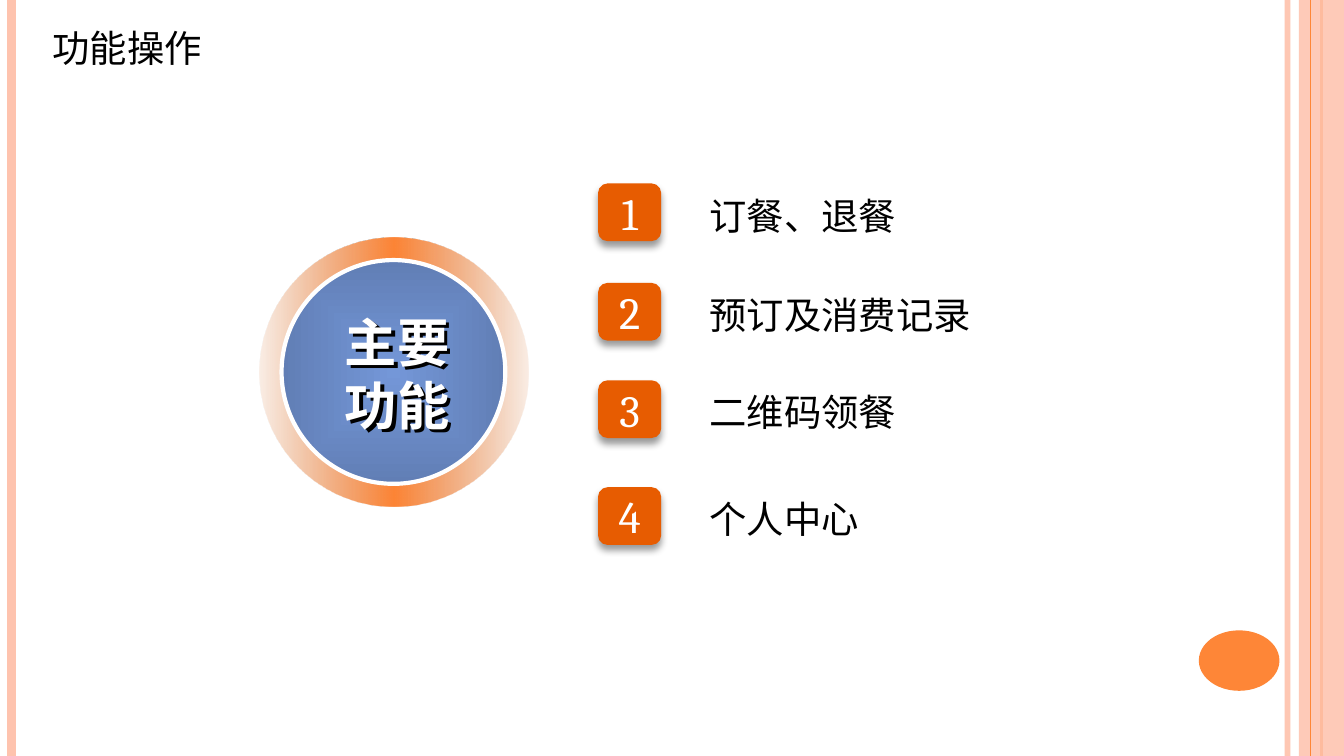
from lxml import etree
from pptx import Presentation
from pptx import util as u
from pptx.dml.color import RGBColor
from pptx.enum import shapes, text
from pptx.oxml import parse_xml
from pptx.oxml.ns import nsdecls, qn

PX = 4572  # 200 px to the inch
WIDTH, HEIGHT = 2000, 1125
ORANGE, PEACH, BADGE, BLUE = "FE8637", "FEC3AE", "E75C01", "7598D9"
WHITE, BLACK = "FFFFFF", "000000"
SANS, SERIF = "Noto Sans CJK SC", "Cambria"
FEATURES = [(273, "订餐、退餐"), (421, "预订及消费记录"), (566, "二维码领餐"), (725, "个人中心")]


def px(*lengths):
    return [u.Emu(length * PX) for length in lengths]


def rgb(value):
    return RGBColor.from_string(value)


def set_alpha(shape, percent):
    colour = shape.element.spPr.find(".//" + qn("a:srgbClr"))
    etree.SubElement(colour, qn("a:alpha")).set("val", str(percent * 1000))


def add_shadow(shape, blur, distance, direction, alpha):
    """Give a black outer shadow; blur and distance in points, direction in degrees."""
    shape.shadow.inherit = False
    properties = shape.element.spPr
    properties.replace(properties.find(qn("a:effectLst")), parse_xml(
        f'<a:effectLst {nsdecls("a")}><a:outerShdw blurRad="{u.Pt(blur)}" dist="{u.Pt(distance)}" '
        f'dir="{direction * 60000}" algn="ctr" rotWithShape="0"><a:srgbClr val="{BLACK}">'
        f'<a:alpha val="{alpha * 1000}"/></a:srgbClr></a:outerShdw></a:effectLst>'))


def add_gradient(shape, stops, direction):
    """Fill with (position, colour, shade, alpha) stops; direction is a:lin or a:path XML."""
    stop_xml = "".join(
        f'<a:gs pos="{position * 1000}"><a:srgbClr val="{colour}"><a:shade val="{shade * 1000}"/>'
        f'<a:alpha val="{alpha * 1000}"/></a:srgbClr></a:gs>'
        for position, colour, shade, alpha in stops)
    shape.fill.background()
    properties = shape.element.spPr
    properties.replace(properties.find(qn("a:noFill")), parse_xml(
        f'<a:gradFill {nsdecls("a")} rotWithShape="1"><a:gsLst>{stop_xml}</a:gsLst>'
        f'{direction}</a:gradFill>'))


def add_form(slide, preset, box, fill=None):
    form = slide.shapes.add_shape(preset, *px(*box))
    form.shadow.inherit = False
    form.line.fill.background()
    if fill:
        form.fill.solid()
        form.fill.fore_color.rgb = rgb(fill)
    return form


def add_rule(slide, x, colour, width):
    """Draw a vertical line over the full slide height."""
    rule = slide.shapes.add_connector(shapes.MSO_CONNECTOR.STRAIGHT, *px(x, 0, x, HEIGHT))
    rule.line.color.rgb = rgb(colour)
    rule.line.width = u.Pt(width)
    etree.SubElement(rule.element.spPr, qn("a:effectLst"))
    return rule


def write(shape, *lines, size=20, font=SANS, colour=BLACK, bold=False, wrap=True,
          align=text.PP_ALIGN.LEFT, anchor=text.MSO_ANCHOR.TOP, inset=None):
    frame = shape.text_frame
    frame.word_wrap = wrap
    frame.auto_size = text.MSO_AUTO_SIZE.NONE
    frame.vertical_anchor = anchor
    if inset is not None:
        frame.margin_left = frame.margin_right = frame.margin_top = frame.margin_bottom = inset
    for index, line in enumerate(lines):
        paragraph = frame.add_paragraph() if index else frame.paragraphs[0]
        paragraph.alignment = align
        run = paragraph.add_run()
        run.text = line
        run.font.size = u.Pt(size)
        run.font.bold = bold
        run.font.color.rgb = rgb(colour)
        run.font.name = font
    for properties in shape.element.iter(qn("a:rPr")):
        etree.SubElement(properties, qn("a:ea")).set("typeface", SANS)


def add_frame(slide):
    """Draw the stripes at both edges and the page marker."""
    set_alpha(add_rule(slide, 1916, PEACH, 3), 93)
    add_rule(slide, 17, PEACH, 4.5)
    add_rule(slide, 1966, ORANGE, 1.5)
    band = add_form(slide, shapes.MSO_SHAPE.RECTANGLE, (1933, 0, WIDTH - 1933, HEIGHT), PEACH)
    set_alpha(band, 87)
    add_rule(slide, 1950, ORANGE, 0.75)
    add_form(slide, shapes.MSO_SHAPE.OVAL, (1784, 938, 120, 90), ORANGE)


def add_title(slide, left, top, width, height):
    title = slide.shapes.title
    title.left, title.top, title.width, title.height = px(left, top, width, height)
    write(title, "功能操作", wrap=False)


def add_hub(slide, left, top, size):
    ring = add_form(slide, shapes.MSO_SHAPE.DONUT, (left, top, size, size))
    ring.adjustments[0] = 0.09
    add_gradient(ring, [(0, ORANGE, 67, 12), (50, ORANGE, 100, 100), (100, ORANGE, 67, 12)],
                 '<a:lin ang="0" scaled="1"/>')
    disc_size = 333
    disc = add_form(slide, shapes.MSO_SHAPE.OVAL, (left + 33, top + 33, disc_size, disc_size))
    add_gradient(disc, [(0, BLUE, 100, 100), (100, BLUE, 66, 100)],
                 '<a:path path="shape"><a:fillToRect l="50000" t="50000" r="50000" b="50000"/></a:path>')
    disc.line.color.rgb = rgb(WHITE)
    disc.line.width = u.Pt(2.25)
    caption = slide.shapes.add_textbox(*px(left + 80, top + 98, 250, 204))
    add_shadow(caption, 0, 2.5, 45, 100)
    write(caption, "主要", "功能", size=28, font=SERIF, colour=WHITE, bold=True,
          align=text.PP_ALIGN.CENTER)


def add_feature(slide, left, top, number, name):
    badge = add_form(slide, shapes.MSO_SHAPE.ROUNDED_RECTANGLE, (left, top, 94, 86), BADGE)
    add_shadow(badge, 4, 3, 90, 40)
    write(badge, str(number), size=24, font=SERIF, colour=WHITE, inset=0,
          align=text.PP_ALIGN.CENTER, anchor=text.MSO_ANCHOR.MIDDLE)
    label = slide.shapes.add_textbox(*px(left + 146, top + 4, 600, 88))
    write(label, name)


def main():
    deck = Presentation()
    deck.slide_width, deck.slide_height = px(WIDTH, HEIGHT)
    slide = deck.slides.add_slide(deck.slide_layouts[5])
    add_frame(slide)
    add_title(slide, 58, 28, 264, 88)
    add_hub(slide, 386, 354, 400)
    for number, (top, name) in enumerate(FEATURES, start=1):
        add_feature(slide, 890, top, number, name)
    deck.save("out.pptx")


if __name__ == "__main__":
    main()
